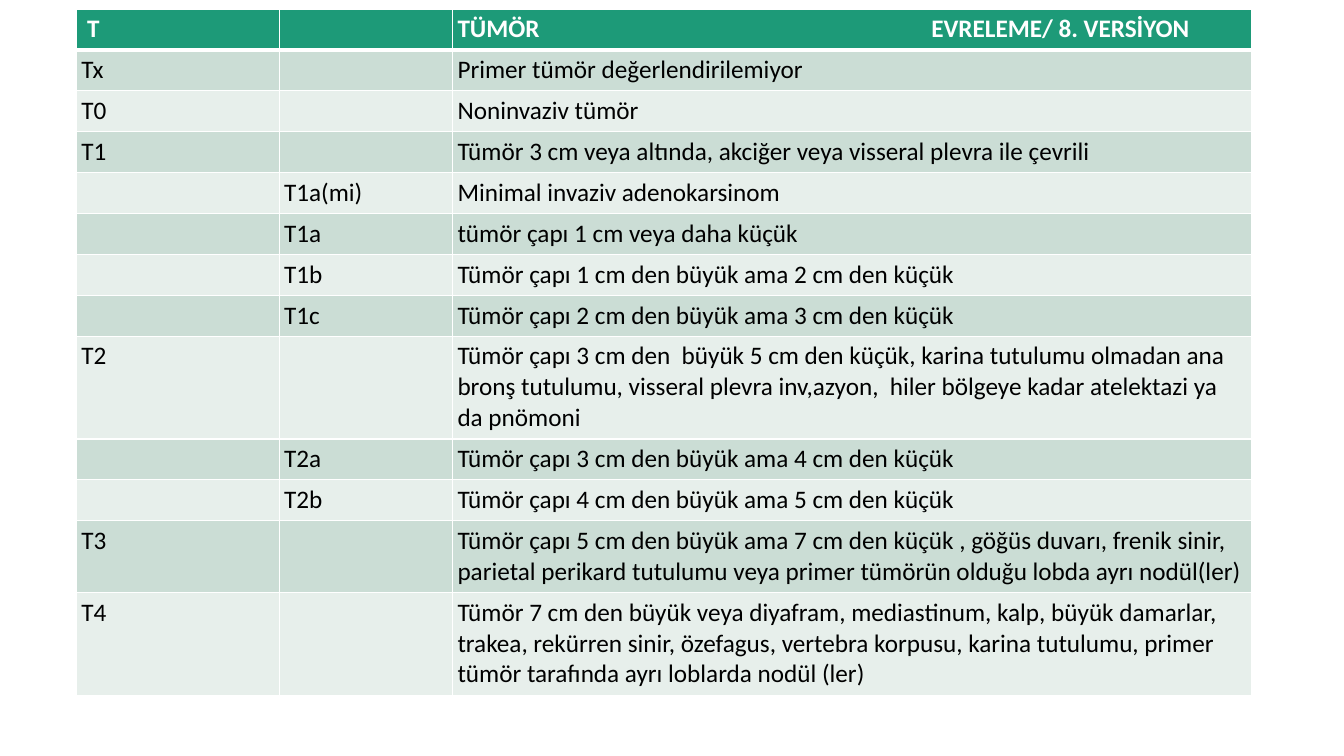
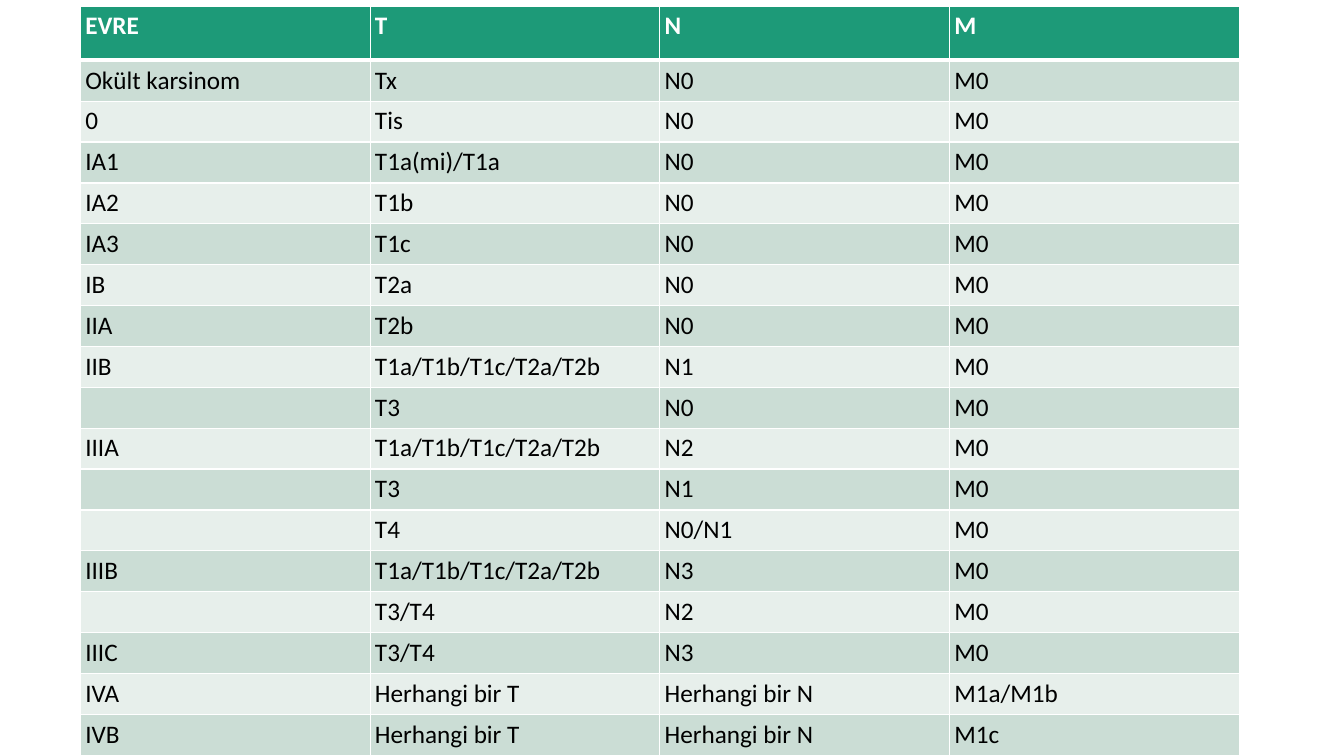
from lxml.etree import SubElement
from pptx import Presentation
from pptx.dml.color import RGBColor
from pptx.oxml.ns import qn
from pptx.util import Cm, Pt

# Shared look
GREEN = RGBColor(0x1D, 0x9A, 0x78)
BAND_DARK = RGBColor(0xCB, 0xDD, 0xD5)
BAND_LIGHT = RGBColor(0xE7, 0xEF, 0xEB)
WHITE = RGBColor(0xFF, 0xFF, 0xFF)
BLACK = RGBColor(0x00, 0x00, 0x00)
FONT = "Calibri"
TEXT_SIZE = 18
CELL_MARGIN = 0.12
LINE_HEIGHT = 0.78
ROW_PADDING = 0.25
THIN, THICK = 1, 3

# Content: lengths in cm, "lines" gives the rows that wrap
TUMOUR_TABLE = {
    "left": 1.93, "top": 0.23,
    "columns": [5.11, 4.37, 20.14],
    "header_height": 1.03,
    "header_tab": 11.94,
    "lines": {8: 3, 11: 2, 12: 3},
    "rows": [
        (" T", "", "TÜMÖR\tEVRELEME/ 8. VERSİYON"),
        ("Tx", "", "Primer tümör değerlendirilemiyor"),
        ("T0", "", "Noninvaziv tümör"),
        ("T1", "", "Tümör 3 cm veya altında, akciğer veya visseral plevra ile çevrili"),
        ("", "T1a(mi)", "Minimal invaziv adenokarsinom"),
        ("", "T1a", "tümör çapı 1 cm veya daha küçük"),
        ("", "T1b", "Tümör çapı 1 cm den büyük ama 2 cm den küçük"),
        ("", "T1c", "Tümör çapı 2 cm den büyük ama 3 cm den küçük"),
        ("T2", "", "Tümör çapı 3 cm den  büyük 5 cm den küçük, karina tutulumu olmadan ana "
                   "bronş tutulumu, visseral plevra inv,azyon,  hiler bölgeye kadar "
                   "atelektazi ya da pnömoni"),
        ("", "T2a", "Tümör çapı 3 cm den büyük ama 4 cm den küçük"),
        ("", "T2b", "Tümör çapı 4 cm den büyük ama 5 cm den küçük"),
        ("T3", "", "Tümör çapı 5 cm den büyük ama 7 cm den küçük , göğüs duvarı, frenik "
                   "sinir, parietal perikard tutulumu veya primer tümörün olduğu lobda "
                   "ayrı nodül(ler)"),
        ("T4", "", "Tümör 7 cm den büyük veya diyafram, mediastinum, kalp, büyük damarlar, "
                   "trakea, rekürren sinir, özefagus, vertebra korpusu, karina tutulumu, "
                   "primer tümör tarafında ayrı loblarda nodül (ler)"),
    ],
}

STAGE_TABLE = {
    "left": 2.03, "top": 0.15,
    "columns": [7.3] * 4,
    "header_height": 1.37,
    "header_tab": None,
    "lines": {},
    "rows": [
        ("EVRE", "T", "N", "M"),
        ("Okült karsinom", "Tx", "N0", "M0"),
        ("0", "Tis", "N0", "M0"),
        ("IA1", "T1a(mi)/T1a", "N0", "M0"),
        ("IA2", "T1b", "N0", "M0"),
        ("IA3", "T1c", "N0", "M0"),
        ("IB", "T2a", "N0", "M0"),
        ("IIA", "T2b", "N0", "M0"),
        ("IIB", "T1a/T1b/T1c/T2a/T2b", "N1", "M0"),
        ("", "T3", "N0", "M0"),
        ("IIIA", "T1a/T1b/T1c/T2a/T2b", "N2", "M0"),
        ("", "T3", "N1", "M0"),
        ("", "T4", "N0/N1", "M0"),
        ("IIIB", "T1a/T1b/T1c/T2a/T2b", "N3", "M0"),
        ("", "T3/T4", "N2", "M0"),
        ("IIIC", "T3/T4", "N3", "M0"),
        ("IVA", "Herhangi bir T", "Herhangi bir N", "M1a/M1b"),
        ("IVB", "Herhangi bir T", "Herhangi bir N", "M1c"),
    ],
}


def write_text(paragraph, text, color=BLACK, bold=False, tab=None):
    """Write one formatted run, with an optional tab stop in cm."""
    if tab is not None and "\t" in text:
        tab_list = SubElement(paragraph._p.get_or_add_pPr(), qn("a:tabLst"))
        SubElement(tab_list, qn("a:tab"), pos=str(Cm(tab)), algn="l")
    run = paragraph.add_run()
    run.text = text
    run.font.name = FONT
    run.font.size = Pt(TEXT_SIZE)
    run.font.bold = bold
    run.font.color.rgb = color


def set_borders(cell, top=THIN, bottom=THIN):
    properties = cell._tc.get_or_add_tcPr()
    for side, width in (("L", THIN), ("R", THIN), ("T", top), ("B", bottom)):
        line = SubElement(properties, qn(f"a:ln{side}"), w=str(Pt(width)))
        fill = SubElement(line, qn("a:solidFill"))
        SubElement(fill, qn("a:srgbClr"), val=str(WHITE))


def style_cell(cell, row_index):
    # The thick line under the header belongs to both neighbouring rows
    set_borders(cell,
                top=THICK if row_index == 1 else THIN,
                bottom=THICK if row_index == 0 else THIN)
    cell.fill.solid()
    if row_index == 0:
        cell.fill.fore_color.rgb = GREEN
    else:
        cell.fill.fore_color.rgb = BAND_DARK if row_index % 2 else BAND_LIGHT
    cell.margin_left = cell.margin_right = Cm(CELL_MARGIN)
    cell.margin_top = cell.margin_bottom = Cm(CELL_MARGIN)


def add_staging_table(slide, content):
    rows, columns = content["rows"], content["columns"]
    heights = [content["header_height"]] + [
        content["lines"].get(index, 1) * LINE_HEIGHT + ROW_PADDING
        for index in range(1, len(rows))]
    table = slide.shapes.add_table(
        len(rows), len(columns), Cm(content["left"]), Cm(content["top"]),
        Cm(sum(columns)), Cm(sum(heights))).table
    table.horz_banding = False

    for column, width in zip(table.columns, columns):
        column.width = Cm(width)
    for row_index, texts in enumerate(rows):
        table.rows[row_index].height = Cm(heights[row_index])
        is_header = row_index == 0
        for column_index, text in enumerate(texts):
            cell = table.cell(row_index, column_index)
            style_cell(cell, row_index)
            if text:
                write_text(cell.text_frame.paragraphs[0], text,
                           color=WHITE if is_header else BLACK,
                           bold=is_header, tab=content["header_tab"])


def main():
    presentation = Presentation()
    presentation.slide_width = Cm(33.87)
    presentation.slide_height = Cm(19.05)
    for content in (TUMOUR_TABLE, STAGE_TABLE):
        slide = presentation.slides.add_slide(presentation.slide_layouts[6])
        add_staging_table(slide, content)
    presentation.save("out.pptx")


if __name__ == "__main__":
    main()
